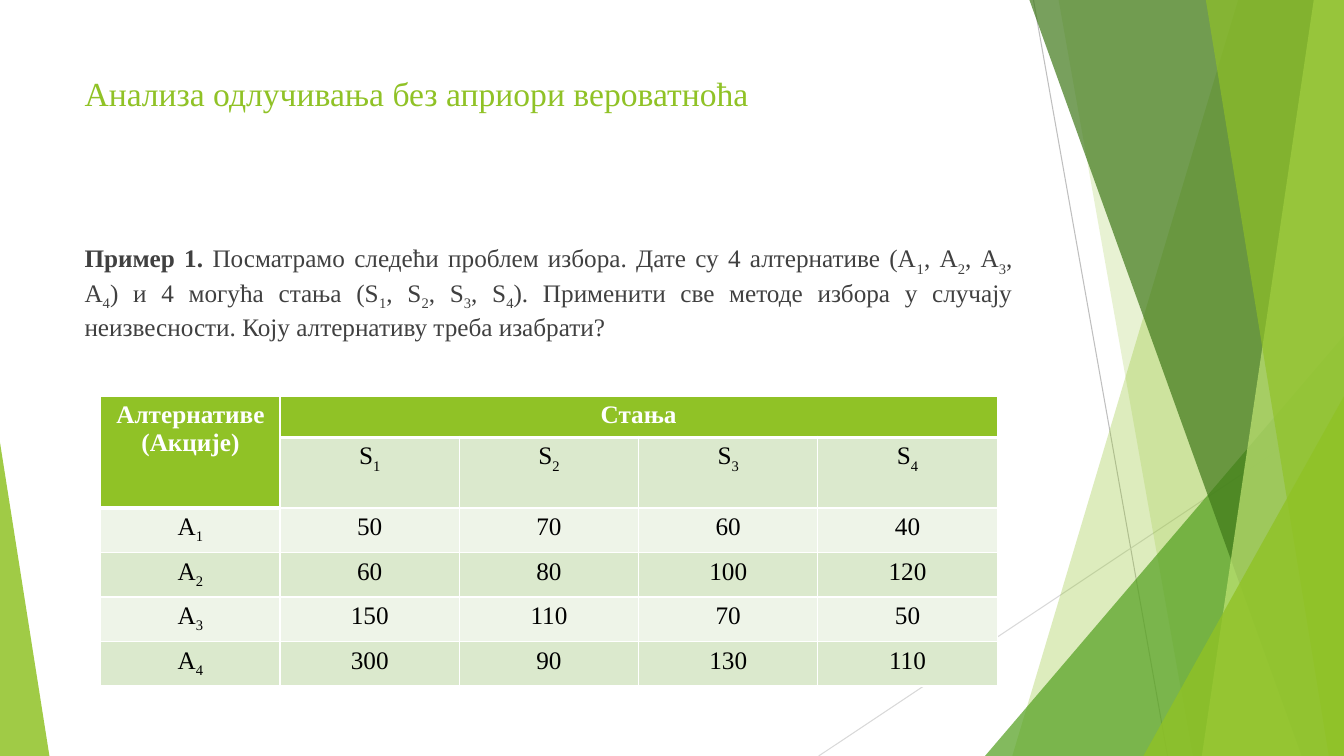
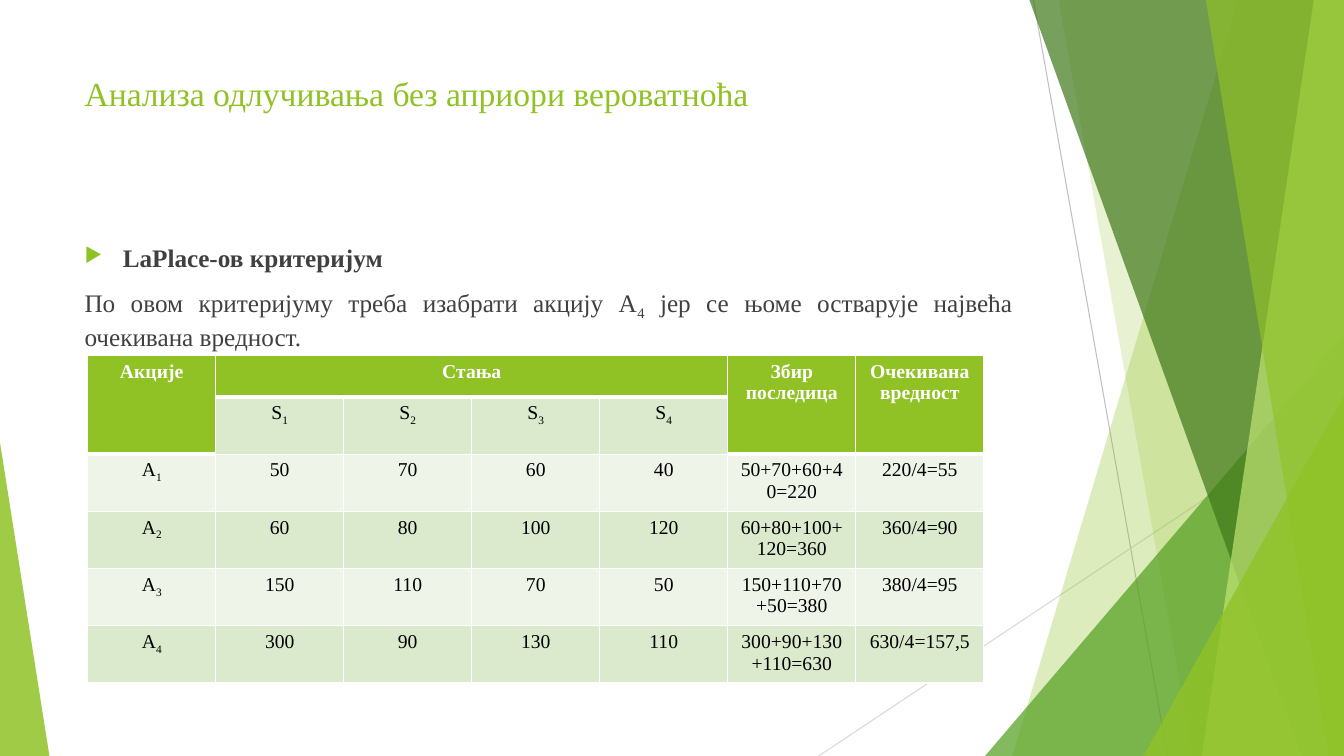
from dataclasses import dataclass

from lxml.etree import SubElement
from pptx import Presentation
from pptx.dml.color import RGBColor
from pptx.enum.shapes import MSO_CONNECTOR, MSO_SHAPE
from pptx.enum.text import PP_ALIGN
from pptx.oxml.ns import qn
from pptx.util import Inches, Pt


# Theme
@dataclass(frozen=True)
class Theme:
    font: str = "Times New Roman"
    title_size: int = 24
    body_size: int = 18
    small_size: int = 14
    accent: str = "90C226"
    leaf: str = "54A021"
    forest: str = "3F7819"
    lime: str = "C0E474"
    text: str = "404040"
    cell_text: str = "000000"
    white: str = "FFFFFF"
    row_dark: str = "DBE9CD"
    row_light: str = "EEF4E8"
    line_dark: str = "BFBFBF"
    line_light: str = "D9D9D9"


THEME = Theme()
WIDTH, HEIGHT = 13.33, 7.5

# Shared decoration: lines (start, end, colour)
LINES = [
    ((10.25, 0), (11.58, HEIGHT), THEME.line_dark),
    ((WIDTH, 4.03), (8.12, HEIGHT), THEME.line_light),
]
# Bands reach the right edge: (top x, bottom x, colour, opacity %)
# Triangles stand on the bottom edge: (left, top, width, apex, colour, opacity %)
DECORATION = [
    ("band", 12.28, 10.04, THEME.accent, 30),
    ("band", 10.5, 11.83, THEME.accent, 20),
    ("triangle", 9.77, 3.33, 3.56, 1, THEME.leaf, 72),
    ("band", 10.21, 12.91, THEME.forest, 70),
    ("band", 13.03, 11.92, THEME.lime, 70),
    ("band", 11.96, 13.18, THEME.accent, 65),
    ("triangle", 11.34, 3.93, 1.99, 1, THEME.accent, 80),
    ("triangle", 0, 4.39, 0.49, 0, THEME.accent, 85),
]

# Content: "_" lowers the next character; None is a cell covered by a merge
TITLE = "Анализа одлучивања без априори вероватноћа"
PAYOFFS = [
    [50, 70, 60, 40],
    [60, 80, 100, 120],
    [150, 110, 70, 50],
    [300, 90, 130, 110],
]
STATES = ["S_1", "S_2", "S_3", "S_4"]
STATES_HEADER = ["Стања", None, None, None]


def laplace_cells(values):
    """Return the sum of the payoffs and their mean as shown in the table."""
    total = sum(values)
    mean = f"{total / len(values):g}".replace(".", ",")
    return ["+".join(map(str, values)) + f"={total}", f"{total}/{len(values)}={mean}"]


CHOICE_ROWS = [
    ["Алтернативе\n(Акције)", *STATES_HEADER],
    [None, *STATES],
    *([f"А_{n}", *values] for n, values in enumerate(PAYOFFS, 1)),
]
LAPLACE_ROWS = [
    ["Акције", *STATES_HEADER, "Збир\nпоследица", "Очекивана\nвредност"],
    [None, *STATES, None, None],
    *([f"А_{n}", *values, *laplace_cells(values)]
      for n, values in enumerate(PAYOFFS, 1)),
]
# Body paragraphs: (bold lead, plain text, bulleted)
SLIDES = [
    {
        "body": [(
            "Пример 1. ",
            "Посматрамо следећи проблем избора. Дате су 4 алтернативе "
            "(А_1, А_2, А_3, А_4) и 4 могућа стања (S_1, S_2, S_3, S_4). "
            "Применити све методе избора у случају неизвесности. "
            "Коју алтернативу треба изабрати?",
            False,
        )],
        "rows": CHOICE_ROWS,
        "tall_columns": [0],
        "place": (1, 3.93, 8.89),
        "heights": [0.41, 0.65] + [0.42] * 4,
        "size": THEME.body_size,
    },
    {
        "body": [
            ("LaPlace-ов критеријум", "", True),
            ("", "По овом критеријуму треба изабрати акцију А_4 јер се њоме "
                 "остварује највећа очекивана вредност.", False),
        ],
        "rows": LAPLACE_ROWS,
        "tall_columns": [0, 5, 6],
        "place": (0.87, 3.53, 8.89),
        "heights": [0.41, 0.52] + [0.53] * 4,
        "size": THEME.small_size,
    },
]


# Text helpers
def style_paragraph(paragraph, size, color, bold=False):
    font = paragraph.font
    font.name, font.size, font.bold = THEME.font, Pt(size), bold
    font.color.rgb = RGBColor.from_string(color)


def add_text(paragraph, text):
    """Add runs, lowering the character that follows each underscore."""
    first, *rest = text.split("_")
    pieces = [(first, False)]
    for part in rest:
        pieces += [(part[0], True), (part[1:], False)]
    for piece, lowered in pieces:
        if piece:
            run = paragraph.add_run()
            run.text = piece
            if lowered:
                run.font._element.set("baseline", "-25000")


def add_bullet(paragraph):
    properties = paragraph._p.get_or_add_pPr()
    indent = Inches(0.38)
    properties.set("marL", str(indent))
    properties.set("indent", str(-indent))
    bullet = [
        SubElement(properties, qn("a:buClr")),
        SubElement(properties, qn("a:buSzPct"), val="80000"),
        SubElement(properties, qn("a:buChar"), char="▶"),
    ]
    SubElement(bullet[0], qn("a:srgbClr"), val=THEME.accent)
    # Bullet settings come before the default run properties
    defaults = properties.find(qn("a:defRPr"))
    for element in bullet:
        defaults.addprevious(element)


def add_text_frame(slide, left, top, width, height):
    box = slide.shapes.add_textbox(*map(Inches, (left, top, width, height)))
    box.text_frame.word_wrap = True
    return box.text_frame


# Decoration
def paint(shape, color, opacity):
    shape.shadow.inherit = False
    shape.line.fill.background()
    shape.fill.solid()
    shape.fill.fore_color.rgb = RGBColor.from_string(color)
    color_element = shape._element.spPr.find(qn("a:solidFill"))[0]
    SubElement(color_element, qn("a:alpha"), val=str(opacity * 1000))


def add_band(slide, top_x, bottom_x, color, opacity):
    corners = [(top_x, 0), (WIDTH, 0), (WIDTH, HEIGHT), (bottom_x, HEIGHT)]
    points = [(Inches(x), Inches(y)) for x, y in corners]
    builder = slide.shapes.build_freeform(*points[0])
    builder.add_line_segments(points[1:], close=True)
    paint(builder.convert_to_shape(), color, opacity)


def add_triangle(slide, left, top, width, apex, color, opacity):
    shape = slide.shapes.add_shape(
        MSO_SHAPE.ISOSCELES_TRIANGLE,
        *map(Inches, (left, top, width, HEIGHT - top)))
    shape.adjustments[0] = apex
    paint(shape, color, opacity)


def add_decoration(slide):
    for start, end, color in LINES:
        line = slide.shapes.add_connector(
            MSO_CONNECTOR.STRAIGHT, *map(Inches, start + end))
        line.line.width = Pt(0.75)
        line.line.color.rgb = RGBColor.from_string(color)
        SubElement(line._element.spPr, qn("a:effectLst"))
    draw = {"band": add_band, "triangle": add_triangle}
    for kind, *settings in DECORATION:
        draw[kind](slide, *settings)


# Title and body
def add_title(slide):
    paragraph = add_text_frame(slide, 0.74, 0.67, 9.4, 1.44).paragraphs[0]
    add_text(paragraph, TITLE)
    style_paragraph(paragraph, THEME.title_size, THEME.accent)


def add_body(slide, paragraphs):
    frame = add_text_frame(slide, 0.74, 2.36, 9.4, 4.24)
    for index, (lead, text, bulleted) in enumerate(paragraphs):
        paragraph = frame.add_paragraph() if index else frame.paragraphs[0]
        paragraph.space_before = Pt(10)
        style_paragraph(paragraph, THEME.body_size, THEME.text)
        if lead:
            run = paragraph.add_run()
            run.text, run.font.bold = lead, True
        add_text(paragraph, text)
        if bulleted:
            add_bullet(paragraph)
        else:
            paragraph.alignment = PP_ALIGN.JUSTIFY


# Table
def add_borders(cell, bottom_width):
    properties = cell._tc.get_or_add_tcPr()
    for side, width in (("L", 1), ("R", 1), ("T", 1), ("B", bottom_width)):
        line = SubElement(properties, qn(f"a:ln{side}"), w=str(Pt(width)))
        fill = SubElement(line, qn("a:solidFill"))
        SubElement(fill, qn("a:srgbClr"), val=THEME.white)


def fill_cell(cell, text, row_index, size):
    header = row_index == 0 or text is None
    stripe = THEME.row_dark if row_index % 2 else THEME.row_light
    add_borders(cell, 3 if header else 1)
    cell.fill.solid()
    cell.fill.fore_color.rgb = RGBColor.from_string(
        THEME.accent if header else stripe)
    lines = [] if text is None else str(text).split("\n")
    for index, line in enumerate(lines):
        frame = cell.text_frame
        paragraph = frame.add_paragraph() if index else frame.paragraphs[0]
        paragraph.alignment = PP_ALIGN.CENTER
        style_paragraph(
            paragraph, size, THEME.white if header else THEME.cell_text, header)
        add_text(paragraph, line)


def add_payoff_table(slide, rows, tall_columns, place, heights, size):
    left, top, width = place
    columns = len(rows[0])
    table = slide.shapes.add_table(
        len(rows), columns,
        *map(Inches, (left, top, width, sum(heights)))).table
    for column in table.columns:
        column.width = Inches(width / columns)
    for row, height in zip(table.rows, heights):
        row.height = Inches(height)
    for row_index, row in enumerate(rows):
        for column_index, text in enumerate(row):
            fill_cell(table.cell(row_index, column_index), text, row_index, size)
    for column_index in tall_columns:
        table.cell(0, column_index).merge(table.cell(1, column_index))
    table.cell(0, 1).merge(table.cell(0, len(STATES)))


def main():
    presentation = Presentation()
    presentation.slide_width = Inches(WIDTH)
    presentation.slide_height = Inches(HEIGHT)
    for content in SLIDES:
        slide = presentation.slides.add_slide(presentation.slide_layouts[6])
        add_decoration(slide)
        add_title(slide)
        add_body(slide, content["body"])
        add_payoff_table(
            slide, content["rows"], content["tall_columns"],
            content["place"], content["heights"], content["size"])
    presentation.save("out.pptx")


if __name__ == "__main__":
    main()
